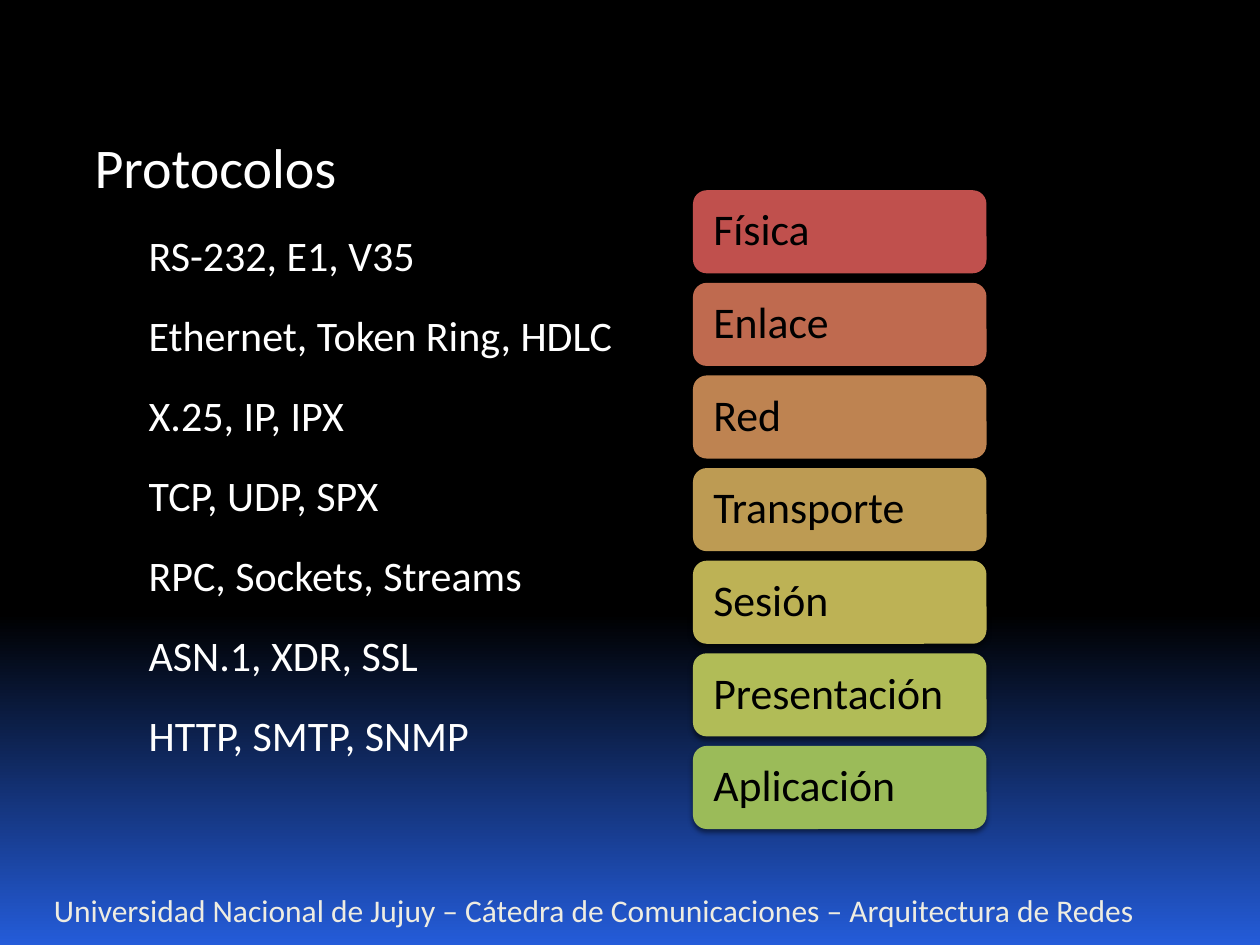
from copy import deepcopy
from lxml import etree
from pptx import Presentation
from pptx import util as u
from pptx.dml.color import RGBColor
from pptx.enum import shapes, text
from pptx.oxml import parse_xml
from pptx.oxml.ns import nsdecls, qn

FONT = "Calibri"
COLORS = {"white": "FFFFFF", "cream": "EEECE1", "black": "000000", "blue": "245CD9"}
BACKGROUND = [(0, "black"), (0.65, "black"), (1, "blue")]
FOOTER = "Universidad Nacional de Jujuy – Cátedra de Comunicaciones – Arquitectura de Redes"
HEADING = "Protocolos"
LAYERS = [
    ("Física", "C0504D", "RS-232, E1, V35"),
    ("Enlace", "BF6A4F", "Ethernet, Token Ring, HDLC"),
    ("Red", "BE8351", "X.25, IP, IPX"),
    ("Transporte", "BD9B53", "TCP, UDP, SPX"),
    ("Sesión", "BDB255", "RPC, Sockets, Streams"),
    ("Presentación", "B1BC57", "ASN.1, XDR, SSL"),
    ("Aplicación", "9BBB59", "HTTP, SMTP, SNMP"),
]
LAYER_LEFT, LAYER_TOP, LAYER_PITCH = 5.5, 1.51, 0.735
LAYER_WIDTH, LAYER_HEIGHT = 2.33, 0.66
SHADOW = (
    f'<a:outerShdw {nsdecls("a")} blurRad="{u.Pt(3)}" dist="{u.Pt(2)}" dir="5400000" rotWithShape="0">'
    f'<a:srgbClr val="{COLORS["black"]}"><a:alpha val="50000"/></a:srgbClr></a:outerShdw>'
)


def set_font(para, size, color):
    para.font.name = FONT
    para.font.size = u.Pt(size)
    para.font.color.rgb = RGBColor.from_string(COLORS[color])


def paint_background(page):
    fill = page.background.fill
    fill.gradient()
    fill.gradient_angle = 270
    stop_list = page.element.xpath(".//a:gsLst")[0]
    stop_list.insert(1, deepcopy(stop_list[0]))
    for stop, (position, color) in zip(fill.gradient_stops, BACKGROUND):
        stop.position = position
        stop.color.rgb = RGBColor.from_string(COLORS[color])


def add_footer(page):
    box = page.shapes.add_textbox(u.Inches(0.33), u.Inches(7.02), u.Inches(9.25), u.Inches(0.4))
    frame = box.text_frame
    frame.word_wrap = True
    frame.vertical_anchor = text.MSO_ANCHOR.BOTTOM
    frame.text = FOOTER
    set_font(frame.paragraphs[0], 18, "cream")


def fill_protocols(box):
    box.left, box.top = u.Inches(0.58), u.Inches(1)
    box.width, box.height = u.Inches(4.83), u.Inches(5.42)
    frame = box.text_frame
    frame.auto_size = text.MSO_AUTO_SIZE.NONE
    frame.text = "\n".join([HEADING] + [protocols for _, _, protocols in LAYERS])
    for index, para in enumerate(frame.paragraphs):
        level = min(index, 1)
        para.level = level
        para.space_before = u.Pt(5 * level)
        para.space_after = u.Pt(12)
        margin, indent = [(0.45, -0.38), (0.81, -0.31)][level]
        properties = para._p.get_or_add_pPr()
        properties.set("marL", str(u.Inches(margin)))
        properties.set("indent", str(u.Inches(indent)))
        etree.SubElement(properties, qn("a:buNone"))
        set_font(para, [32, 24][level], "white")


def add_layer(page, index, name, color):
    box = page.shapes.add_shape(
        shapes.MSO_SHAPE.ROUNDED_RECTANGLE,
        u.Inches(LAYER_LEFT), u.Inches(LAYER_TOP + index * LAYER_PITCH),
        u.Inches(LAYER_WIDTH), u.Inches(LAYER_HEIGHT),
    )
    box.fill.solid()
    box.fill.fore_color.rgb = RGBColor.from_string(color)
    box.line.fill.background()
    box.shadow.inherit = False
    box.element.spPr.find(qn("a:effectLst")).append(parse_xml(SHADOW))
    frame = box.text_frame
    frame.word_wrap = True
    frame.vertical_anchor = text.MSO_ANCHOR.MIDDLE
    frame.margin_left = frame.margin_right = u.Inches(0.13)
    frame.text = name
    para = frame.paragraphs[0]
    para.alignment = text.PP_ALIGN.LEFT
    para.line_spacing = 0.9
    set_font(para, 25, "black")


def main():
    deck = Presentation()
    deck.slide_width, deck.slide_height = u.Inches(10), u.Inches(7.5)
    page = deck.slides.add_slide(deck.slide_layouts[1])
    title = page.shapes.title.element
    title.getparent().remove(title)
    paint_background(page)
    add_footer(page)
    fill_protocols(page.placeholders[1])
    for index, (name, color, _) in enumerate(LAYERS):
        add_layer(page, index, name, color)
    deck.save("out.pptx")


if __name__ == "__main__":
    main()
